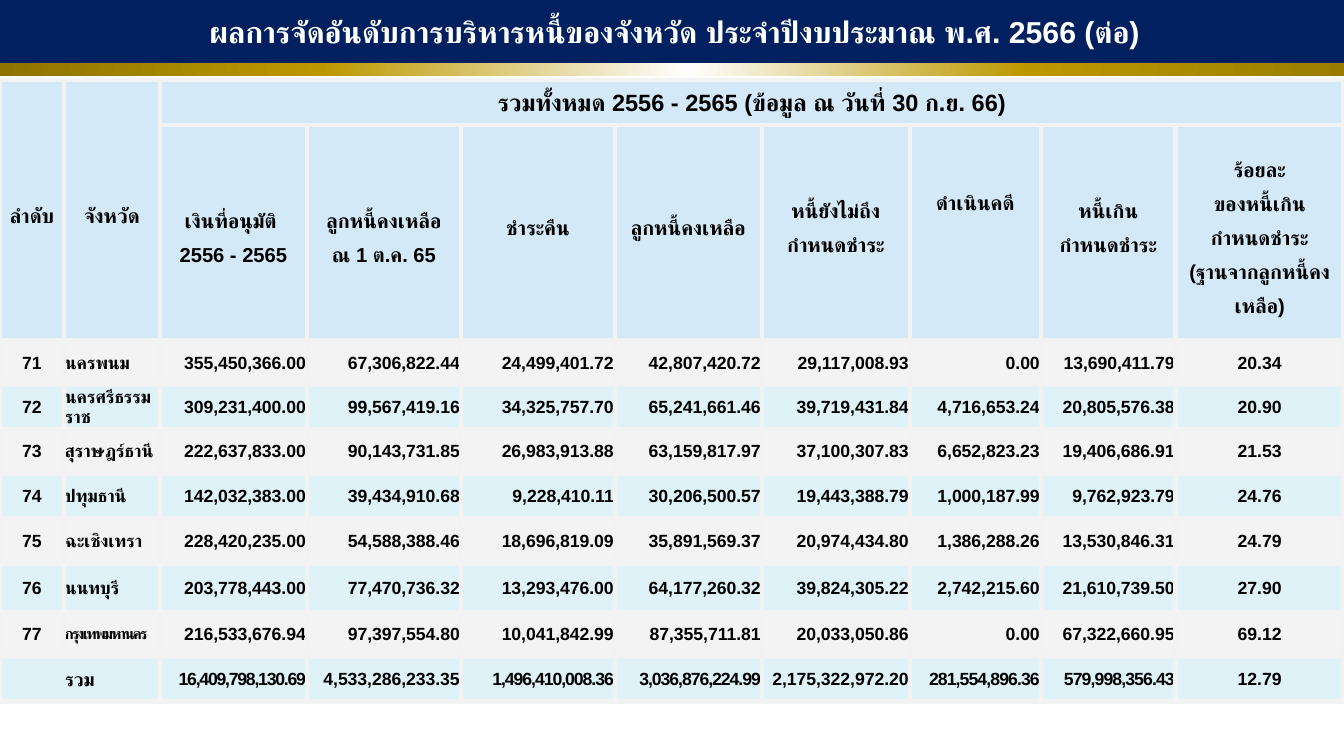
from lxml.etree import SubElement as sub
from pptx import Presentation
from pptx.dml.color import RGBColor as Rgb
from pptx.enum.shapes import MSO_SHAPE as Shape
from pptx.enum.text import MSO_ANCHOR as Anchor, PP_ALIGN as Align
from pptx.oxml import parse_xml as to_xml
from pptx.oxml.ns import nsdecls, qn
from pptx.util import Pt

PX = 914400 // 121
FACE = "Arial"
INK = {"navy": "002060", "white": "FFFFFF", "black": "000000", "head": "CAE4F6",
       "aqua": "D7EFF5", "grey": "F2F2F2"}
GOLD = [(0, "8E7300"), (24, "BC9800"), (51, "FFFFFF"), (76, "BC9800"), (100, "9A7D00")]
TITLE = "ผลการจัดอันดับการบริหารหนี้ของจังหวัด ประจำปีงบประมาณ พ.ศ. 2566 (ต่อ)"
SPAN = "รวมทั้งหมด 2556 - 2565 (ข้อมูล ณ วันที่ 30 ก.ย. 66)"
COLS = [64, 96, 147, 154, 154, 147, 148, 131, 135, 168]
ROWS = [45, 215, 45, 44, 45, 44, 46, 48, 45, 45]
LIFT = 20
HEADS = [
    ("เงินที่อนุมัติ \n2556 - 2565", 0),
    ("ลูกหนี้คงเหลือ\nณ 1 ต.ค. 65", 0),
    ("ชำระคืน", LIFT),
    ("ลูกหนี้คงเหลือ", LIFT),
    ("หนี้ยังไม่ถึง\nกำหนดชำระ", LIFT),
    ("ดำเนินคดี", 58),
    ("หนี้เกิน\nกำหนดชำระ", LIFT),
    ("ร้อยละ\nของหนี้เกิน\nกำหนดชำระ\n(ฐานจากลูกหนี้คงเหลือ)", 0),
]
DATA = [
    ["71", "นครพนม", "355,450,366.00", "67,306,822.44", "24,499,401.72",
     "42,807,420.72", "29,117,008.93", "0.00", "13,690,411.79", "20.34"],
    ["72", "นครศรีธรรมราช", "309,231,400.00", "99,567,419.16", "34,325,757.70",
     "65,241,661.46", "39,719,431.84", "4,716,653.24", "20,805,576.38", "20.90"],
    ["73", "สุราษฎร์ธานี", "222,637,833.00", "90,143,731.85", "26,983,913.88",
     "63,159,817.97", "37,100,307.83", "6,652,823.23", "19,406,686.91", "21.53"],
    ["74", "ปทุมธานี", "142,032,383.00", "39,434,910.68", "9,228,410.11",
     "30,206,500.57", "19,443,388.79", "1,000,187.99", "9,762,923.79", "24.76"],
    ["75", "ฉะเชิงเทรา", "228,420,235.00", "54,588,388.46", "18,696,819.09",
     "35,891,569.37", "20,974,434.80", "1,386,288.26", "13,530,846.31", "24.79"],
    ["76", "นนทบุรี", "203,778,443.00", "77,470,736.32", "13,293,476.00",
     "64,177,260.32", "39,824,305.22", "2,742,215.60", "21,610,739.50", "27.90"],
    ["77", "กรุงเทพมหานคร", "216,533,676.94", "97,397,554.80", "10,041,842.99",
     "87,355,711.81", "20,033,050.86", "0.00", "67,322,660.95", "69.12"],
    ["รวม", "", "16,409,798,130.69", "4,533,286,233.35", "1,496,410,008.36",
     "3,036,876,224.99", "2,175,322,972.20", "281,554,896.36", "579,998,356.43", "12.79"],
]
TIGHT = {(8, 1): -1, (9, 2): -0.7, (9, 4): -0.6, (9, 5): -0.6, (9, 7): -0.5, (9, 8): -0.5}


def write(frame, text, size, ink="black", align=Align.CENTER, gap=None, tight=0):
    """Write one bold paragraph, with a line break at each newline."""
    para = frame.paragraphs[0]
    para.alignment = align
    if gap:
        para.line_spacing = gap
    for i, line in enumerate(text.split("\n")):
        if i:
            para.add_line_break()
        run = para.add_run()
        run.text = line
        font = run.font
        font.size, font.bold, font.name = Pt(size), True, FACE
        font.color.rgb = Rgb.from_string(INK[ink])
        mark = run._r.get_or_add_rPr()
        sub(mark, qn("a:cs"), typeface=FACE)
        if tight:
            mark.set("spc", str(round(tight * 100)))


def paint(cell, ink, alpha):
    """Give a cell its fill, borders, margins and anchor."""
    cell.fill.solid()
    cell.fill.fore_color.rgb = Rgb.from_string(INK[ink])
    props = cell._tc.get_or_add_tcPr()
    tone = props.find(qn("a:solidFill"))[0]
    sub(tone, qn("a:alpha"), val=str(alpha * 1000))
    for i, side in enumerate("LRTB"):
        props.insert(i, to_xml(
            f'<a:ln{side} {nsdecls("a")} w="{Pt(3)}"><a:solidFill>'
            f'<a:srgbClr val="{INK["grey"]}"/></a:solidFill></a:ln{side}>'))
    cell.margin_left = cell.margin_right = cell.margin_top = PX
    cell.margin_bottom = 0
    cell.vertical_anchor = Anchor.MIDDLE


def sheet(slide, x, y):
    """Place the debt table with its top left corner at x, y."""
    box = [v * PX for v in (x, y, sum(COLS), sum(ROWS))]
    grid = slide.shapes.add_table(len(ROWS), len(COLS), *box).table
    grid.first_row = grid.horz_banding = False
    for col, wide in zip(grid.columns, COLS):
        col.width = wide * PX
    for r, high in enumerate(ROWS):
        grid.rows[r].height = high * PX
        look = ("head", 80) if r < 2 else ("aqua", 80) if r % 2 else ("grey", 90)
        for c in range(len(COLS)):
            paint(grid.cell(r, c), *look)
    for top, end in [((0, 0), (1, 0)), ((0, 1), (1, 1)), ((0, 2), (0, 9)), ((9, 0), (9, 1))]:
        grid.cell(*top).merge(grid.cell(*end))
    for c, text in enumerate(["ลำดับ", "จังหวัด"]):
        write(grid.cell(0, c).text_frame, text, 12, gap=1.5)
    write(grid.cell(0, 2).text_frame, SPAN, 14)
    for c, (text, lift) in enumerate(HEADS, 2):
        cell = grid.cell(1, c)
        cell.margin_bottom = lift * PX
        write(cell.text_frame, text, 12, gap=1.5 if lift <= LIFT else None)
    for r, line in enumerate(DATA, 2):
        for c, text in enumerate(line):
            if not text:
                continue
            size = 9 if (r, c) == (8, 1) else 11 if (r, c) == (9, 0) else 10.5
            align = Align.CENTER if c in (0, 9) else Align.LEFT if c == 1 else Align.RIGHT
            write(grid.cell(r, c).text_frame, text, size, align=align,
                  tight=TIGHT.get((r, c), 0))


def banner(slide, x, y, wide, high):
    """Place the navy title bar over its gold strip."""
    group = slide.shapes.add_group_shape()
    gold, navy = [group.shapes.add_shape(Shape.RECTANGLE, x * PX, y * PX, wide * PX, h * PX)
                  for h in (high, high - 13)]
    for part in (gold, navy):
        part.shadow.inherit = False
        part.line.fill.background()
    gold.fill.gradient()
    gold.fill.gradient_angle = 0
    stops = gold._element.spPr.find(qn("a:gradFill")).find(qn("a:gsLst"))
    for stop in list(stops):
        stops.remove(stop)
    for at, tone in GOLD:
        stop = sub(stops, qn("a:gs"), pos=str(at * 1000))
        sub(stop, qn("a:srgbClr"), val=tone)
    navy.fill.solid()
    navy.fill.fore_color.rgb = Rgb.from_string(INK["navy"])
    navy.text_frame.word_wrap = True
    navy.text_frame.vertical_anchor = Anchor.MIDDLE
    write(navy.text_frame, TITLE, 18, "white")


def main():
    """Build the slide and save it."""
    deck = Presentation()
    deck.slide_width, deck.slide_height = 1344 * PX, 756 * PX
    slide = deck.slides.add_slide(deck.slide_layouts[6])
    sheet(slide, 0, 80)
    banner(slide, 0, 0, 1349, 76)
    deck.save("out.pptx")


if __name__ == "__main__":
    main()
